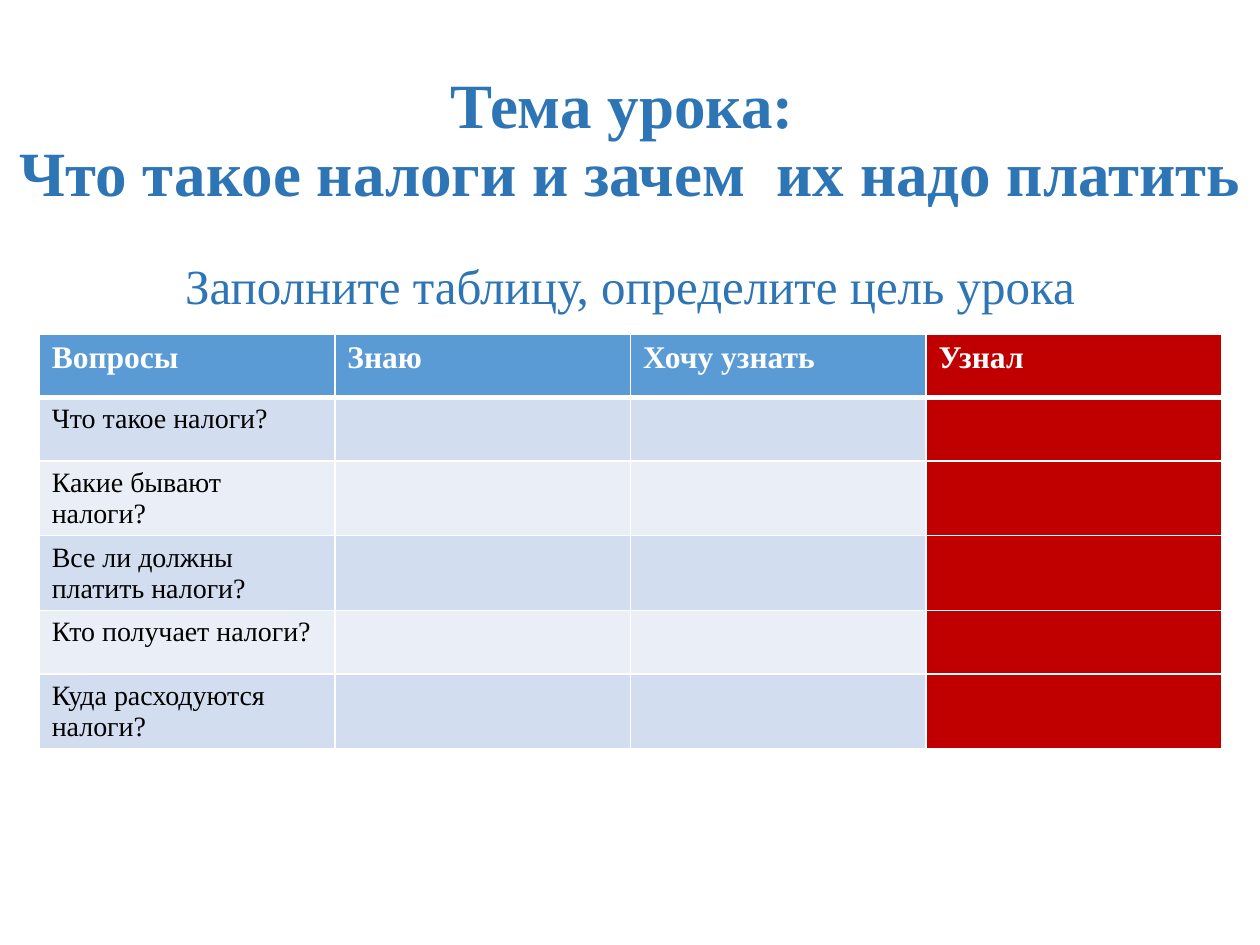
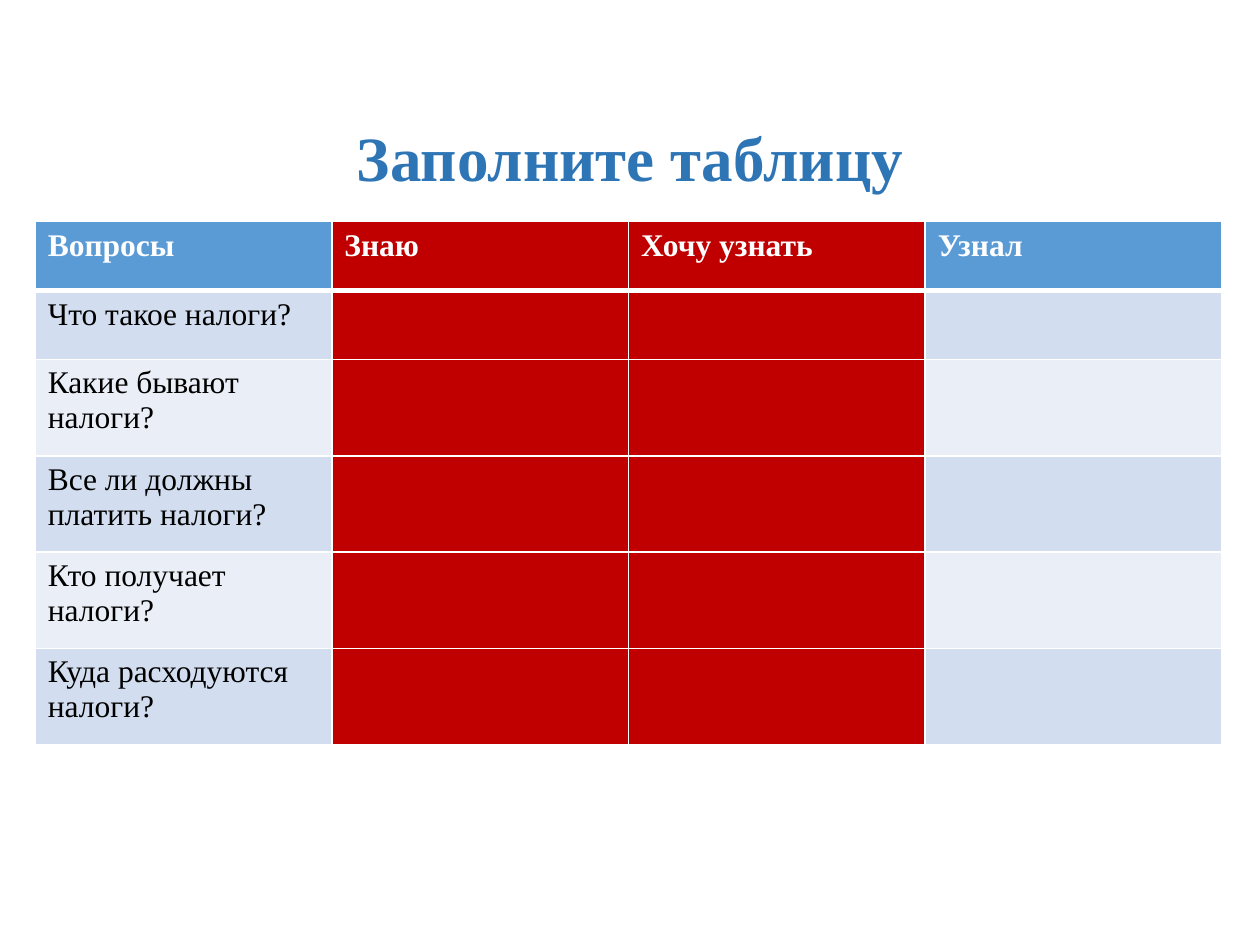
from dataclasses import dataclass

from lxml import etree
from pptx import Presentation
from pptx import util as u
from pptx.dml.color import RGBColor
from pptx.enum import text
from pptx.oxml import ns

Cm = u.Cm


@dataclass(frozen=True)
class Theme:
    font: str = "Times New Roman"
    heading: str = "2E75B6"
    header: str = "5B9BD5"
    bands: tuple = ("D2DEEF", "EAEFF7")
    marked: str = "C00000"
    white: str = "FFFFFF"
    black: str = "000000"
    title_size: int = 36
    subtitle_size: int = 28
    header_size: int = 18
    thin: float = 1
    thick: float = 3


HEADERS = ["Вопросы", "Знаю", "Хочу узнать", "Узнал"]
QUESTIONS = [
    "Что такое налоги?",
    "Какие бывают налоги?",
    "Все ли должны платить налоги?",
    "Кто получает налоги?",
    "Куда расходуются налоги?",
]


class Deck:
    def __init__(self, theme):
        self.theme = theme
        self.prs = Presentation()
        self.prs.slide_width, self.prs.slide_height = Cm(25.4), Cm(19.05)
        self.slide = None

    def new_slide(self):
        self.slide = self.prs.slides.add_slide(self.prs.slide_layouts[5])

    def add_run(self, p, words, size, color, bold=False):
        r = p.add_run()
        r.text = words
        f = r.font
        f.name, f.size, f.bold = self.theme.font, u.Pt(size), bold
        f.color.rgb = RGBColor.from_string(color)

    def heading(self, sp, top, height, lines, size, bold):
        """Full-width centred text, used by titles and subtitles."""
        sp.left, sp.top, sp.width, sp.height = Cm(0), Cm(top), Cm(25.4), Cm(height)
        tf = sp.text_frame
        tf.word_wrap = True
        tf.auto_size = text.MSO_AUTO_SIZE.NONE
        tf.vertical_anchor = text.MSO_ANCHOR.MIDDLE
        p = tf.paragraphs[0]
        p.alignment = text.PP_ALIGN.CENTER
        p.line_spacing = 0.9
        for i, line in enumerate(lines):
            if i:
                p.add_line_break()
            self.add_run(p, line, size, self.theme.heading, bold)

    def title(self, top, *lines):
        self.heading(self.slide.shapes.title, top, 3.68, lines,
                     self.theme.title_size, True)

    def subtitle(self, top, height, line):
        sp = self.slide.shapes.add_textbox(0, 0, 0, 0)
        self.heading(sp, top, height, [line], self.theme.subtitle_size, False)

    def borders(self, cell, top, bottom):
        tc_pr = cell._tc.get_or_add_tcPr()
        thin = self.theme.thin
        for side, width in zip("LRTB", (thin, thin, top, bottom)):
            ln = etree.SubElement(tc_pr, ns.qn(f"a:ln{side}"), w=str(u.Pt(width)))
            fill = etree.SubElement(ln, ns.qn("a:solidFill"))
            etree.SubElement(fill, ns.qn("a:srgbClr"), val=self.theme.white)

    def question_table(self, left, top, col_width, row_heights, size, marked):
        """Question grid; the columns listed in marked are highlighted."""
        t = self.theme
        rows = [HEADERS] + [[q, "", "", ""] for q in QUESTIONS]
        table = self.slide.shapes.add_table(
            len(rows), len(HEADERS), Cm(left), Cm(top),
            Cm(col_width * len(HEADERS)), Cm(sum(row_heights))).table
        table.horz_banding = False
        for col in table.columns:
            col.width = Cm(col_width)
        for i, (row, height) in enumerate(zip(rows, row_heights)):
            table.rows[i].height = Cm(height)
            is_header = i == 0
            base = t.header if is_header else t.bands[(i - 1) % 2]
            for j, words in enumerate(row):
                cell = table.cell(i, j)
                self.borders(cell, t.thick if i == 1 else t.thin,
                             t.thick if is_header else t.thin)
                cell.fill.solid()
                cell.fill.fore_color.rgb = RGBColor.from_string(
                    t.marked if j in marked else base)
                if words:
                    self.add_run(cell.text_frame.paragraphs[0], words,
                                 t.header_size if is_header else size,
                                 t.white if is_header else t.black, is_header)


def main():
    deck = Deck(Theme())

    # Lesson topic and goal
    deck.new_slide()
    deck.title(1.02, "Тема урока: ", "Что такое налоги и зачем  их надо платить")
    deck.question_table(0.79, 6.73, 5.96, [1.28] * 6, 16, marked={3})
    deck.subtitle(3.25, 5.13, "Заполните таблицу, определите цель урока")

    # Table to fill in
    deck.new_slide()
    deck.title(1.4, "Заполните таблицу")
    deck.question_table(0.71, 4.47, 5.98, [1.39] * 2 + [1.94] * 4, 18, marked={1, 2})

    deck.prs.save("out.pptx")


if __name__ == "__main__":
    main()
